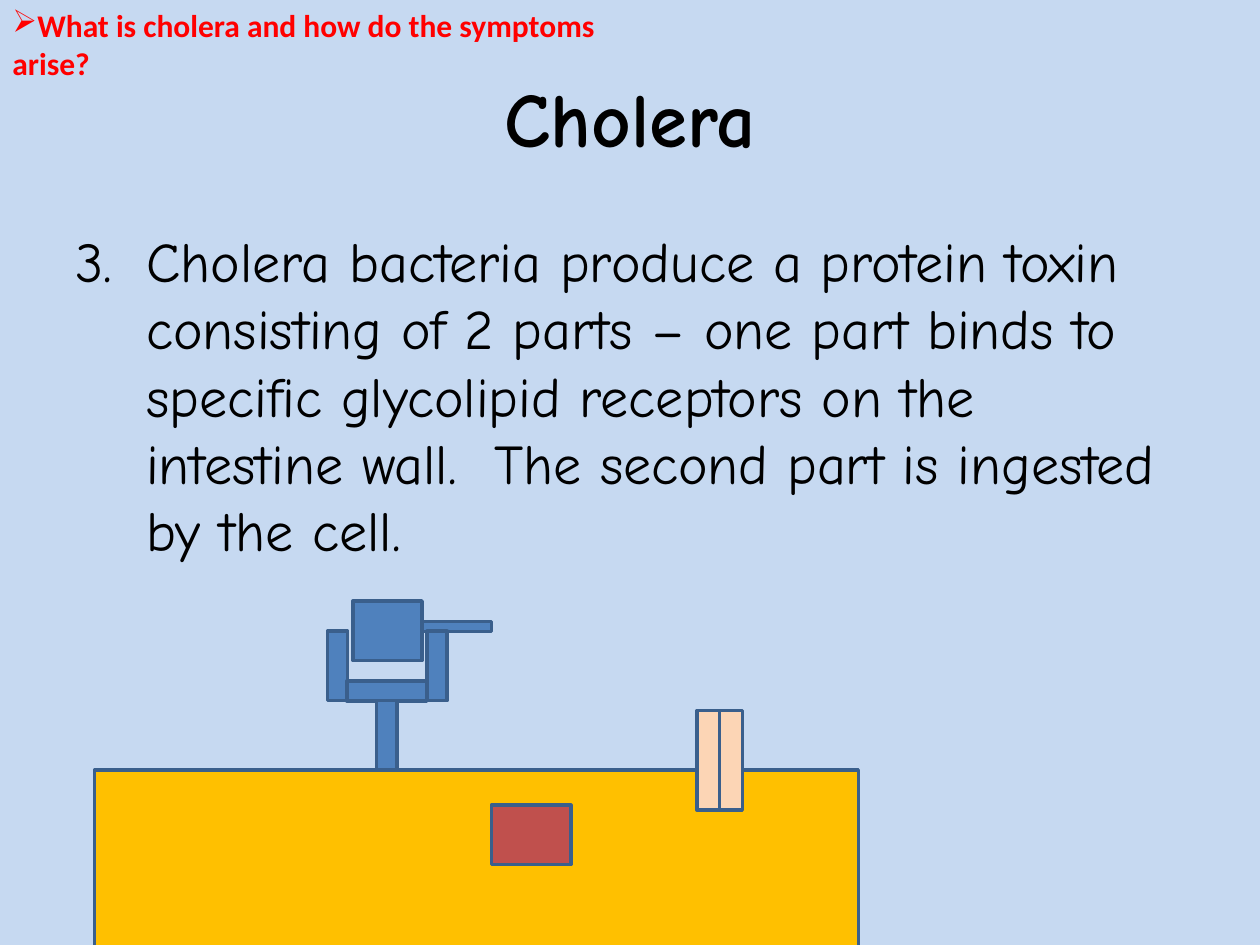
from dataclasses import dataclass

from lxml.etree import SubElement
from pptx import Presentation
from pptx.dml.color import RGBColor
from pptx.enum.shapes import MSO_AUTO_SHAPE_TYPE as ShapeType
from pptx.enum.text import MSO_ANCHOR as Anchor, MSO_AUTO_SIZE as AutoSize, PP_ALIGN as Align
from pptx.oxml.ns import qn
from pptx.util import Pt

BLUE = "4F81BD"
PEACH = "FCD5B5"
OUTLINE = "3A5F8C"
BAR = 11.5
ARM = 39.6


@dataclass(frozen=True)
class Block:
    left: float
    top: float
    width: float
    height: float
    fill: str
    kind: ShapeType = ShapeType.FLOWCHART_PROCESS
    rotation: float = 0


@dataclass(frozen=True)
class TextStyle:
    font: str
    size: float
    color: str
    bold: bool = False


def set_color(target, value: str) -> None:
    target.rgb = RGBColor.from_string(value)


def draw_block(slide, block: Block) -> None:
    shape = slide.shapes.add_shape(
        block.kind, Pt(block.left), Pt(block.top), Pt(block.width), Pt(block.height)
    )
    shape.rotation = block.rotation
    shape.shadow.inherit = False
    shape.fill.solid()
    set_color(shape.fill.fore_color, block.fill)
    set_color(shape.line.color, OUTLINE)
    shape.line.width = Pt(2)


def add_run(paragraph, text: str, style: TextStyle) -> None:
    run = paragraph.add_run()
    run.text = text
    run.font.name = style.font
    run.font.size = Pt(style.size)
    run.font.bold = style.bold
    set_color(run.font.color, style.color)


def add_text_box(slide, left: float, top: float, width: float, height: float):
    box = slide.shapes.add_textbox(Pt(left), Pt(top), Pt(width), Pt(height))
    box.text_frame.word_wrap = True
    return box.text_frame


def add_title(slide) -> None:
    title = slide.shapes.title
    title.left, title.top, title.width, title.height = Pt(36), Pt(21.6), Pt(648), Pt(90)
    title.text_frame.vertical_anchor = Anchor.MIDDLE
    paragraph = title.text_frame.paragraphs[0]
    paragraph.alignment = Align.CENTER
    add_run(paragraph, "Cholera", TextStyle("Comic Neue", 44, "000000", True))


def add_body(slide) -> None:
    paragraph = add_text_box(slide, 36, 126, 648, 356.4).paragraphs[0]
    paragraph.space_before = Pt(6.4)
    properties = paragraph._p.get_or_add_pPr()
    properties.set("marL", str(Pt(40.5)))
    properties.set("indent", str(-Pt(40.5)))
    SubElement(properties, qn("a:buAutoNum"), type="arabicPeriod", startAt="3")
    add_run(
        paragraph,
        "Cholera bacteria produce a protein toxin consisting of 2 parts – one part binds to "
        "specific glycolipid receptors on the intestine wall.  The second part is ingested "
        "by the cell.",
        TextStyle("Comic Neue", 32, "000000"),
    )


def add_question(slide) -> None:
    frame = add_text_box(slide, 0, 0, 360, 51)
    frame.auto_size = AutoSize.SHAPE_TO_FIT_TEXT
    paragraph = frame.paragraphs[0]
    SubElement(paragraph._p.get_or_add_pPr(), qn("a:buChar"), char="➢")
    add_run(
        paragraph,
        "What is cholera and how do the symptoms arise?",
        TextStyle("Calibri", 18, "FF0000", True),
    )


INTESTINE_CELL = Block(54, 440, 436.5, 108, "FFC000", ShapeType.RECTANGLE)
TOXIN_PARTS = [
    Block(201.6, 343.4, ARM, 34, BLUE, ShapeType.RECTANGLE),
    Block(280.8, 460, 45.4, 34, "C0504D", ShapeType.RECTANGLE),
    Block(241.2, 355, ARM, 5.8, BLUE),
]
RECEPTOR = [
    Block(187.2, 360.7, BAR, ARM, BLUE),
    Block(215.3, 372.2, BAR, 45.4, BLUE, rotation=90),
    Block(244.1, 360.7, BAR, ARM, BLUE),
    Block(215.3, 400.3, BAR, ARM, BLUE),
]
CHANNEL = [
    Block(398.2 + 13 * column, 406, 13, 56.9, PEACH, ShapeType.RECTANGLE)
    for column in range(2)
]


def main() -> None:
    presentation = Presentation()
    presentation.slide_width, presentation.slide_height = Pt(720), Pt(540)
    slide = presentation.slides.add_slide(presentation.slide_layouts[5])
    slide.background.fill.solid()
    set_color(slide.background.fill.fore_color, "C6D9F1")

    draw_block(slide, INTESTINE_CELL)
    add_title(slide)
    add_body(slide)
    add_question(slide)
    for block in TOXIN_PARTS + RECEPTOR + CHANNEL:
        draw_block(slide, block)

    presentation.save("out.pptx")


if __name__ == "__main__":
    main()
